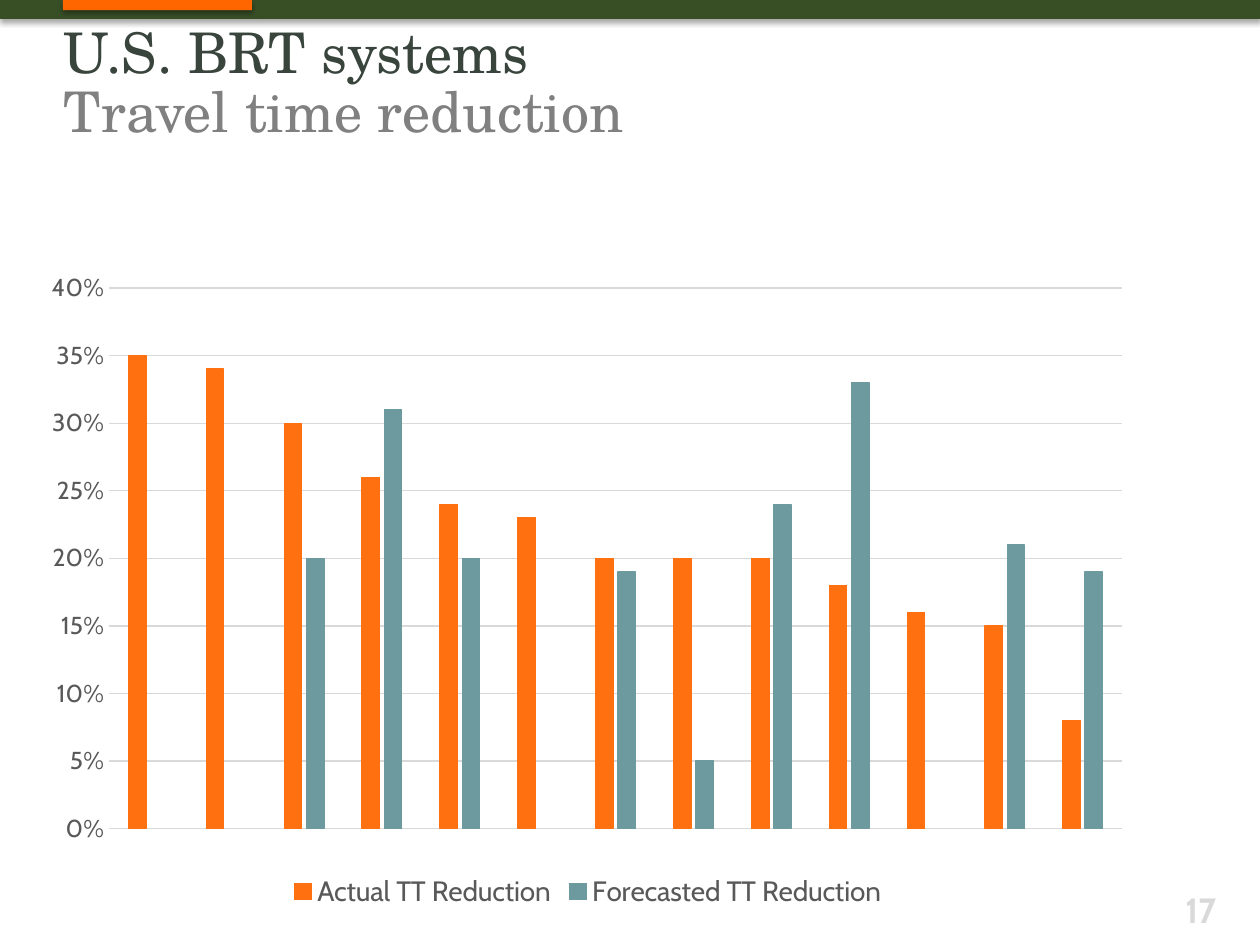
from lxml import etree
from pptx import Presentation, util as u
from pptx.chart.data import CategoryChartData
from pptx.dml.color import RGBColor
from pptx.enum import chart as ce, shapes, text
from pptx.oxml import parse_xml
from pptx.oxml.ns import nsdecls

GREEN = RGBColor(0x38, 0x4F, 0x26)
ORANGE = RGBColor(0xFF, 0x66, 0x00)
BAR_ORANGE = RGBColor(0xFF, 0x70, 0x10)
TEAL = RGBColor(0x6D, 0x9A, 0x9F)
DARK = RGBColor(0x38, 0x44, 0x3C)
GREY = RGBColor(0x80, 0x80, 0x80)
PALE = RGBColor(0xD9, 0xD9, 0xD9)
LABEL = RGBColor(0x59, 0x59, 0x59)
BLACK = RGBColor(0, 0, 0)
SERIF, SANS = "TeX Gyre Schola", "Cabin"

WIDTH, HEIGHT, MARGIN = 10, 7.5, 0.5
TITLE = [("U.S. BRT systems", DARK), ("Travel time reduction", GREY)]
PAGE_NUMBER = [("17", PALE)]
BANDS = [(0, WIDTH, 0.15, GREEN), (MARGIN, 1.5, 0.08, ORANGE)]
SERIES = [
    ("Actual TT Reduction", BAR_ORANGE,
     [0.35, 0.34, 0.3, 0.26, 0.24, 0.23, 0.2, 0.2, 0.2, 0.18, 0.16, 0.15, 0.08]),
    ("Forecasted TT Reduction", TEAL,
     [None, None, 0.2, 0.31, 0.2, None, 0.19, 0.05, 0.24, 0.33, None, 0.21, 0.19]),
]
PLOT_AREA = {"x": 0.07, "y": 0.04, "w": 0.91, "h": 0.83}


def inches(*values):
    return [u.Inches(value) for value in values]


def set_font(font, size, color, name=SANS, bold=False):
    font.size, font.name, font.bold = u.Pt(size), name, bold
    font.color.rgb = color


def add_text(slide, lines, box, size, name, bold=False, inset=(0, 0),
             align=text.PP_ALIGN.LEFT, spacing=None):
    frame = slide.shapes.add_textbox(*inches(*box)).text_frame
    frame.word_wrap = True
    frame.vertical_anchor = text.MSO_ANCHOR.TOP
    frame.margin_left = frame.margin_right = u.Inches(inset[0])
    frame.margin_top = frame.margin_bottom = u.Inches(inset[1])
    paragraph = frame.paragraphs[0]
    paragraph.alignment = align
    if spacing:
        paragraph.line_spacing = u.Pt(spacing)
    for index, (words, color) in enumerate(lines):
        if index:
            paragraph.add_line_break()
        run = paragraph.add_run()
        run.text = words
        set_font(run.font, size, color, name, bold)


def add_band(slide, left, width, height, color):
    band = slide.shapes.add_shape(shapes.MSO_SHAPE.RECTANGLE,
                                  *inches(left, 0, width, height))
    band.fill.solid()
    band.fill.fore_color.rgb = color
    band.line.fill.background()
    band._element.spPr.append(parse_xml(
        f'<a:effectLst {nsdecls("a")}><a:outerShdw blurRad="{u.Pt(3.1)}" '
        f'dist="{u.Pt(1.8)}" dir="5400000" rotWithShape="0"><a:srgbClr val="000000">'
        '<a:alpha val="35000"/></a:srgbClr></a:outerShdw></a:effectLst>'))


def set_plot_area(chart):
    plot_area = chart._chartSpace.chart.plotArea
    for old in plot_area.findall("{*}layout"):
        plot_area.remove(old)
    layout = parse_xml(f'<c:layout {nsdecls("c")}><c:manualLayout/></c:layout>')
    settings = [("layoutTarget", "inner"), ("xMode", "edge"), ("yMode", "edge")]
    for tag, value in settings + list(PLOT_AREA.items()):
        item = etree.SubElement(layout[0], f"{{{layout.nsmap['c']}}}{tag}")
        item.set("val", str(value))
    plot_area.insert(0, layout)


def add_column_chart(slide, box):
    data = CategoryChartData(number_format="0%")
    data.categories = [str(number + 1) for number in range(len(SERIES[0][2]))]
    for name, _, values in SERIES:
        data.add_series(name, values)
    chart = slide.shapes.add_chart(ce.XL_CHART_TYPE.COLUMN_CLUSTERED,
                                   *inches(*box), data).chart
    set_font(chart.font, 10, BLACK)
    chart.has_title = False
    chart.has_legend = True
    chart.legend.position = ce.XL_LEGEND_POSITION.BOTTOM
    chart.legend.include_in_layout = False
    set_font(chart.legend.font, 16, LABEL)

    plot = chart.plots[0]
    plot.gap_width, plot.overlap, plot.vary_by_categories = 219, -27, False
    for series, (_, color, _) in zip(plot.series, SERIES):
        series.format.fill.solid()
        series.format.fill.fore_color.rgb = color
        series.format.line.color.rgb = color
        series.format.line.width = u.Pt(0.75)

    chart.category_axis.visible = False
    axis = chart.value_axis
    axis.minimum_scale, axis.maximum_scale, axis.major_unit = 0, 0.4, 0.05
    axis.major_tick_mark = axis.minor_tick_mark = ce.XL_TICK_MARK.NONE
    axis.format.line.fill.background()
    axis.major_gridlines.format.line.color.rgb = PALE
    axis.major_gridlines.format.line.width = u.Pt(0.75)
    axis.tick_labels.number_format = "0%"
    axis.tick_labels.number_format_is_linked = False
    set_font(axis.tick_labels.font, 14, LABEL)
    set_plot_area(chart)


def main():
    presentation = Presentation()
    presentation.slide_width, presentation.slide_height = inches(WIDTH, HEIGHT)
    slide = presentation.slides.add_slide(presentation.slide_layouts[6])
    for band in BANDS:
        add_band(slide, *band)
    add_text(slide, TITLE, (MARGIN, 0.2, 8.08, 0.95), 32, SERIF, spacing=34)
    add_text(slide, PAGE_NUMBER, (8.83, 7, 0.92, 0.35), 20, SANS, bold=True,
             inset=(0.1, 0.05), align=text.PP_ALIGN.RIGHT)
    add_column_chart(slide, (MARGIN / 2, 2.08, 8.83, 5.17))
    presentation.save("out.pptx")


if __name__ == "__main__":
    main()
